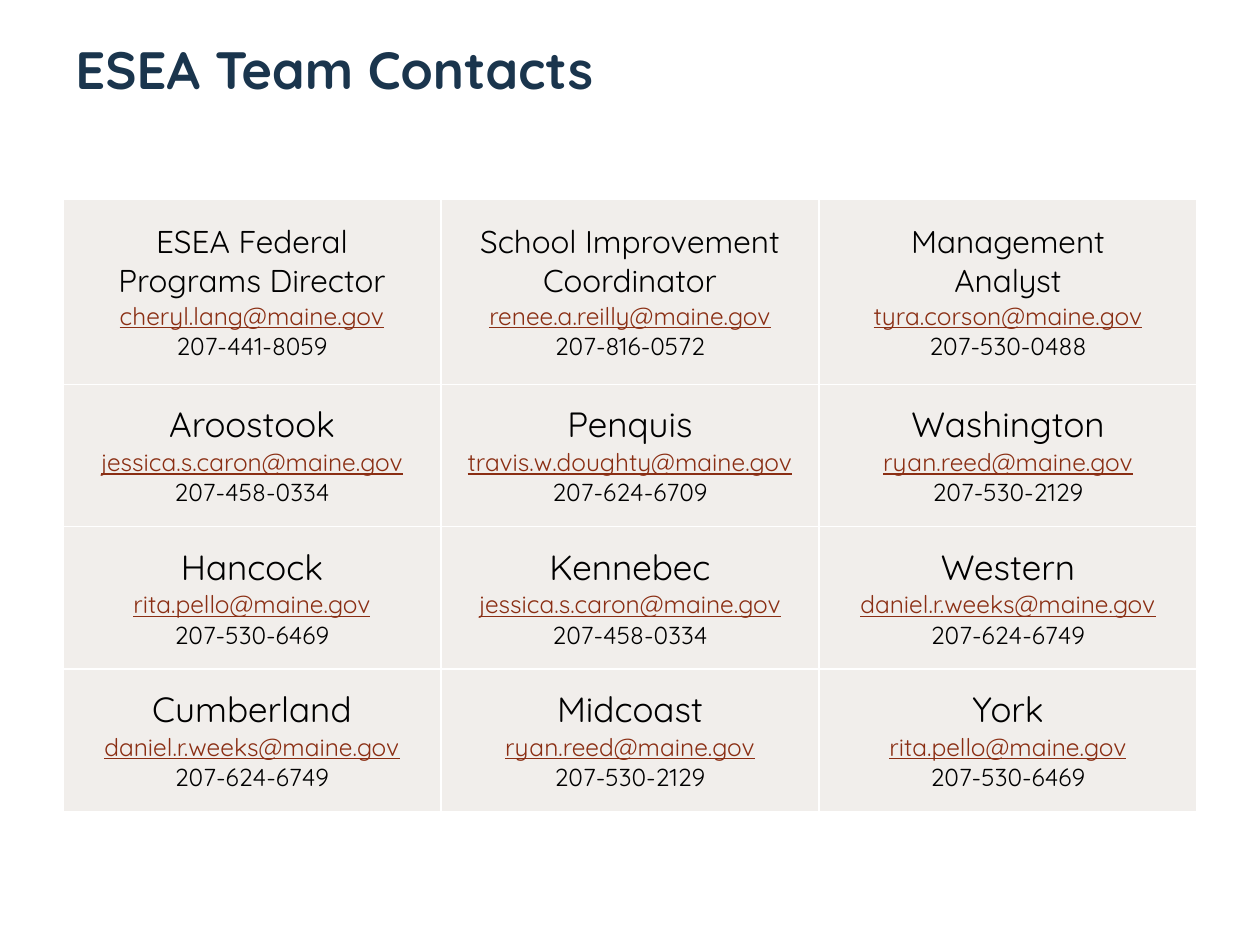
from lxml.etree import SubElement
from pptx import Presentation
from pptx.dml.color import RGBColor
from pptx.enum.text import MSO_ANCHOR as Anchor, PP_ALIGN as Align
from pptx.oxml.ns import qn
from pptx.util import Inches, Pt

NAVY = RGBColor(0x1A, 0x35, 0x4D)
BLACK = RGBColor(0x00, 0x00, 0x00)
RUST = RGBColor(0x8A, 0x2E, 0x13)
SAND = RGBColor(0xF1, 0xEE, 0xEB)
WHITE = RGBColor(0xFF, 0xFF, 0xFF)
FONT = "Quicksand"

CONTACTS = [
    [
        ("ESEA Federal\nPrograms Director", "cheryl.lang", "441-8059"),
        ("School Improvement Coordinator", "renee.a.reilly", "816-0572"),
        ("Management\nAnalyst", "tyra.corson", "530-0488"),
    ],
    [
        ("Aroostook", "jessica.s.caron", "458-0334"),
        ("Penquis", "travis.w.doughty", "624-6709"),
        ("Washington", "ryan.reed", "530-2129"),
    ],
    [
        ("Hancock", "rita.pello", "530-6469"),
        ("Kennebec", "jessica.s.caron", "458-0334"),
        ("Western", "daniel.r.weeks", "624-6749"),
    ],
    [
        ("Cumberland", "daniel.r.weeks", "624-6749"),
        ("Midcoast", "ryan.reed", "530-2129"),
        ("York", "rita.pello", "530-6469"),
    ],
]
ROW_HEIGHTS = [1.47, 1.13, 1.13, 1.13]


def add_span(para, text, size, color=BLACK, bold=False, underline=False):
    for index, line in enumerate(text.split("\n")):
        if index:
            para.add_line_break()
        span = para.add_run()
        span.text = line
        font = span.font
        font.name, font.size = FONT, Pt(size)
        font.bold, font.underline = bold, underline
        font.color.rgb = color


def add_title(page, left, top, width, height):
    box = page.shapes.add_textbox(left, top, width, height)
    frame = box.text_frame
    frame.word_wrap = True
    frame.vertical_anchor = Anchor.MIDDLE
    add_span(frame.paragraphs[0], "ESEA Team Contacts", 30, NAVY, bold=True)


def add_borders(cell):
    properties = cell._tc.get_or_add_tcPr()
    for side in ("a:lnL", "a:lnR", "a:lnT", "a:lnB"):
        line = SubElement(properties, qn(side), w=str(Pt(1)))
        fill = SubElement(line, qn("a:solidFill"))
        SubElement(fill, qn("a:srgbClr"), val=str(WHITE))


def fill_contact(cell, name, mailbox, phone, name_size):
    add_borders(cell)
    cell.fill.solid()
    cell.fill.fore_color.rgb = SAND
    cell.vertical_anchor = Anchor.MIDDLE
    cell.margin_left = cell.margin_right = Inches(0.05)
    cell.margin_top = cell.margin_bottom = Inches(0.05)
    frame = cell.text_frame
    paras = [frame.paragraphs[0], frame.add_paragraph(), frame.add_paragraph()]
    for para in paras:
        para.alignment = Align.CENTER
    add_span(paras[0], name, name_size)
    add_span(paras[1], f"{mailbox}@maine.gov", 14, RUST, underline=True)
    add_span(paras[2], f"207-{phone}", 14)


def add_contacts(page, left, top, width):
    rows, columns = len(CONTACTS), len(CONTACTS[0])
    height = Inches(sum(ROW_HEIGHTS))
    table = page.shapes.add_table(rows, columns, left, top, width, height).table
    table.first_row = False
    table.horz_banding = False
    for column in table.columns:
        column.width = width // columns
    for row_index, contacts in enumerate(CONTACTS):
        table.rows[row_index].height = Inches(ROW_HEIGHTS[row_index])
        name_size = 20 if row_index else 18
        for column_index, contact in enumerate(contacts):
            fill_contact(table.cell(row_index, column_index), *contact, name_size)


def main():
    deck = Presentation()
    deck.slide_width, deck.slide_height = Inches(10), Inches(7.5)
    page = deck.slides.add_slide(deck.slide_layouts[6])
    margin = Inches(0.5)
    width = deck.slide_width - 2 * margin
    add_title(page, margin, Inches(0.08), width, Inches(0.92))
    add_contacts(page, margin, Inches(1.58), width)
    deck.save("out.pptx")


if __name__ == "__main__":
    main()
